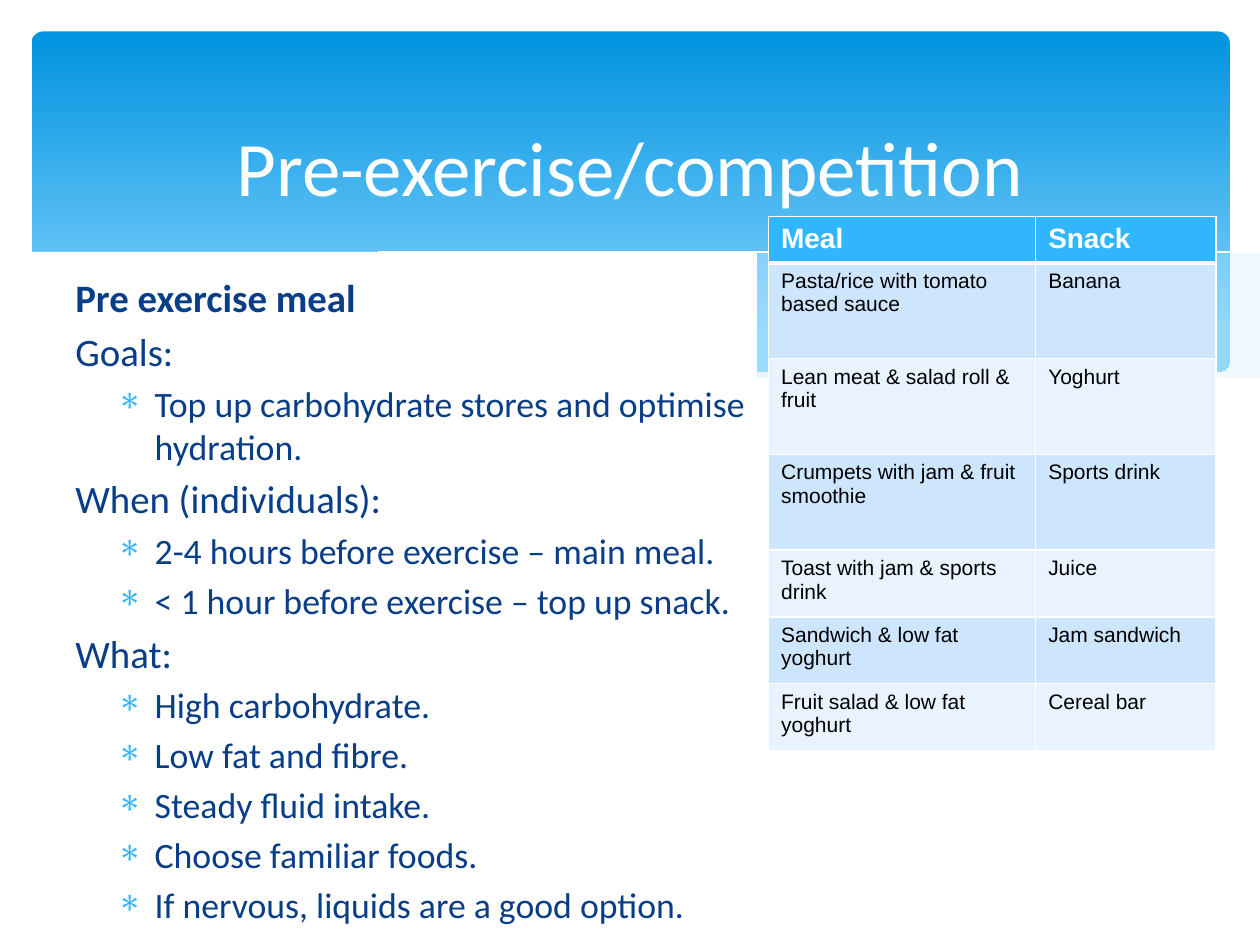
from lxml import etree
from pptx import Presentation, util as u
from pptx.dml.color import RGBColor
from pptx.enum import shapes, text
from pptx.oxml import ns

TITLE = "Pre-exercise/competition"
# (level, bold, wording)
ADVICE = [
    (0, True, "Pre exercise meal"),
    (0, False, "Goals:"),
    (1, False, "Top up carbohydrate stores and optimise hydration."),
    (0, False, "When (individuals):"),
    (1, False, "2-4 hours before exercise – main meal."),
    (1, False, "< 1 hour before exercise – top up snack."),
    (0, False, "What:"),
    (1, False, "High carbohydrate."),
    (1, False, "Low fat and fibre."),
    (1, False, "Steady fluid intake."),
    (1, False, "Choose familiar foods."),
    (1, False, "If nervous, liquids are a good option."),
]
MENU = [
    ("Meal", "Snack"),
    ("Pasta/rice with tomato based sauce", "Banana"),
    ("Lean meat & salad roll & fruit", "Yoghurt"),
    ("Crumpets with jam & fruit smoothie", "Sports drink"),
    ("Toast with jam & sports drink", "Juice"),
    ("Sandwich & low fat yoghurt", "Jam sandwich"),
    ("Fruit salad & low fat yoghurt", "Cereal bar"),
]
COLUMNS = [2.12, 1.43]
ROWS = [0.35] + [0.76] * 3 + [0.53] * 3
SIZES = [22.2, 20.4]  # advice text, by level
COLOR = {
    "white": "FFFFFF", "black": "000000", "navy": "073E87", "accent": "31B6FD",
    "sky_top": "0293E0", "sky_bottom": "83D3FE", "mist": "C6E7FC",
    "band_dark": "CEE5FE", "band_light": "E8F3FF",
}

# Key points that each wave passes through, in inches
RIGHT_CREST = [(9.76, 2), (9.21, 2.1), (8.61, 2.23), (7.79, 2.43), (7.06, 2.57), (6.61, 2.65)]
RIGHT_BELLY = [(6.61, 2.65), (7.05, 2.71), (7.57, 2.76), (8.14, 2.78), (8.72, 2.74),
               (9.21, 2.65), (9.49, 2.57), (9.76, 2.47)]
MIDDLE_CREST = [(8.93, 2.73), (8.07, 2.6), (7.06, 2.4), (6.13, 2.18), (5.41, 2.03),
                (4.64, 1.91), (3.99, 1.86), (3.44, 1.86), (2.86, 1.91)]
MIDDLE_BELLY = [(2.86, 1.91), (3.62, 2.03), (4.49, 2.22), (5.3, 2.4), (6.18, 2.58),
                (6.95, 2.7), (7.61, 2.77), (8.18, 2.79), (8.57, 2.77), (8.93, 2.73)]
LONG_LINE = [(3.09, 1.95), (3.53, 1.89), (4.16, 1.87), (4.89, 1.9), (5.82, 2),
             (6.65, 2.13), (7.6, 2.33), (8.31, 2.51), (9.07, 2.72)]
SHORT_LINE = [(6.13, 2.57), (6.95, 2.35), (7.76, 2.16), (8.66, 1.99), (9.24, 1.9), (9.75, 1.85)]
FRONT_WAVE = [(0.23, 2.13), (0.52, 2.01), (1.06, 1.89), (1.77, 1.84), (2.5, 1.86),
              (3.39, 1.97), (4.47, 2.2), (5.55, 2.45), (6.47, 2.62), (7.26, 2.72),
              (8.09, 2.77), (8.75, 2.73), (9.3, 2.62), (9.77, 2.46)]
# (outline parts, fill, opacity in percent); no fill means a white hairline
WAVES = [
    ([RIGHT_CREST, RIGHT_BELLY], "mist", 29),
    ([MIDDLE_CREST, MIDDLE_BELLY], "mist", 40),
    ([LONG_LINE], None, 100),
    ([SHORT_LINE], None, 100),
    ([FRONT_WAVE, [(9.77, 3.29), (0.23, 3.29)]], "white", 100),
]


def rgb(name):
    return RGBColor.from_string(COLOR[name])


def smooth(points, steps=6):
    """Catmull-Rom curve through the points; two points stay a straight line."""
    if len(points) < 3:
        return points
    padded = [points[0], *points, points[-1]]
    curve = [points[0]]
    for a, b, c, d in zip(padded, padded[1:], padded[2:], padded[3:]):
        for t in (step / steps for step in range(1, steps + 1)):
            curve.append(tuple(
                (2 * q + (r - p) * t + (2 * p - 5 * q + 4 * r - s) * t ** 2
                 + (3 * q - p - 3 * r + s) * t ** 3) / 2
                for p, q, r, s in zip(a, b, c, d)))
    return curve


def add_child(parent, tag, **attributes):
    return etree.SubElement(parent, ns.qn(tag), attributes)


def add_run(paragraph, wording, size, color, font="Calibri", bold=False):
    run = paragraph.add_run()
    run.text = wording
    run.font.size, run.font.name, run.font.bold = u.Pt(size), font, bold
    run.font.color.rgb = rgb(color)


def add_wave(slide, parts, fill, opacity):
    outline = [point for part in parts for point in smooth(part)]
    builder = slide.shapes.build_freeform(*outline[0], scale=u.Inches(1))
    builder.add_line_segments(outline[1:], close=fill is not None)
    wave = builder.convert_to_shape()
    wave.shadow.inherit = False
    if fill is None:
        wave.fill.background()
        wave.line.color.rgb = rgb("white")
        wave.line.width = u.Pt(0)
        return
    wave.fill.solid()
    wave.fill.fore_color.rgb = rgb(fill)
    wave.line.fill.background()
    if opacity < 100:
        color = wave.fill._xPr.find(".//" + ns.qn("a:srgbClr"))
        add_child(color, "a:alpha", val=str(opacity * 1000))


def add_borders(cell, top, bottom):
    for side, width in (("L", 1), ("R", 1), ("T", top), ("B", bottom)):
        line = add_child(cell._tc.get_or_add_tcPr(), "a:ln" + side, w=str(u.Pt(width)))
        add_child(add_child(line, "a:solidFill"), "a:srgbClr", val=COLOR["white"])


def add_banner(slide):
    sky = slide.shapes.add_shape(
        shapes.MSO_SHAPE.ROUNDED_RECTANGLE, *map(u.Inches, (0.25, 0.25, 9.51, 2.7)))
    sky.adjustments[0] = 0.034
    sky.shadow.inherit = False
    sky.line.fill.background()
    sky.fill.gradient()
    sky.fill.gradient_angle = 270
    for stop, color, position in zip(sky.fill.gradient_stops, ("sky_top", "sky_bottom"), (0, 0.9)):
        stop.color.rgb = rgb(color)
        stop.position = position
    for wave in WAVES:
        add_wave(slide, *wave)


def add_title(slide):
    title = slide.shapes.title
    slide.shapes._spTree.append(title._element)  # in front of the banner
    title.left, title.top, title.width, title.height = map(u.Inches, (0.5, 0.69, 9, 1.25))
    frame = title.text_frame
    frame.auto_size = text.MSO_AUTO_SIZE.NONE
    frame.vertical_anchor = text.MSO_ANCHOR.MIDDLE
    frame.paragraphs[0].alignment = text.PP_ALIGN.CENTER
    add_run(frame.paragraphs[0], TITLE, 44, "white")


def add_advice(slide):
    frame = slide.shapes.add_textbox(*map(u.Inches, (0.5, 2.12, 5.53, 4.8))).text_frame
    frame.word_wrap = True
    for index, (level, bold, wording) in enumerate(ADVICE):
        paragraph = frame.add_paragraph() if index else frame.paragraphs[0]
        paragraph.level = level
        paragraph.space_before = u.Pt(SIZES[level] * 0.2 if index else 0)
        properties = paragraph._p.get_or_add_pPr()
        properties.set("marL", str(u.Inches((0.3, 0.63)[level])))
        properties.set("indent", str(u.Inches(-0.3)))
        if level:
            add_child(add_child(properties, "a:buClr"), "a:srgbClr", val=COLOR["accent"])
            add_child(properties, "a:buChar", char="∗")
        else:
            add_child(properties, "a:buNone")
        add_run(paragraph, wording, SIZES[level], "navy", bold=bold)


def add_menu(slide):
    menu = slide.shapes.add_table(
        len(ROWS), len(COLUMNS),
        *map(u.Inches, (6.1, 1.72, sum(COLUMNS), sum(ROWS)))).table
    for column, width in zip(menu.columns, COLUMNS):
        column.width = u.Inches(width)
    for r, (height, wordings) in enumerate(zip(ROWS, MENU)):
        menu.rows[r].height = u.Inches(height)
        header = r == 0
        band = "accent" if header else ("band_light", "band_dark")[r % 2]
        for c, wording in enumerate(wordings):
            cell = menu.cell(r, c)
            add_borders(cell, top=3 if r == 1 else 1, bottom=3 if header else 1)
            cell.fill.solid()
            cell.fill.fore_color.rgb = rgb(band)
            add_run(cell.text_frame.paragraphs[0], wording, 16 if header else 12,
                    "white" if header else "black", "Arial", header)


def main():
    deck = Presentation()
    deck.slide_width, deck.slide_height = u.Inches(10), u.Inches(7.5)
    slide = deck.slides.add_slide(deck.slide_layouts[5])
    for add_part in (add_banner, add_title, add_advice, add_menu):
        add_part(slide)
    deck.save("out.pptx")


if __name__ == "__main__":
    main()
